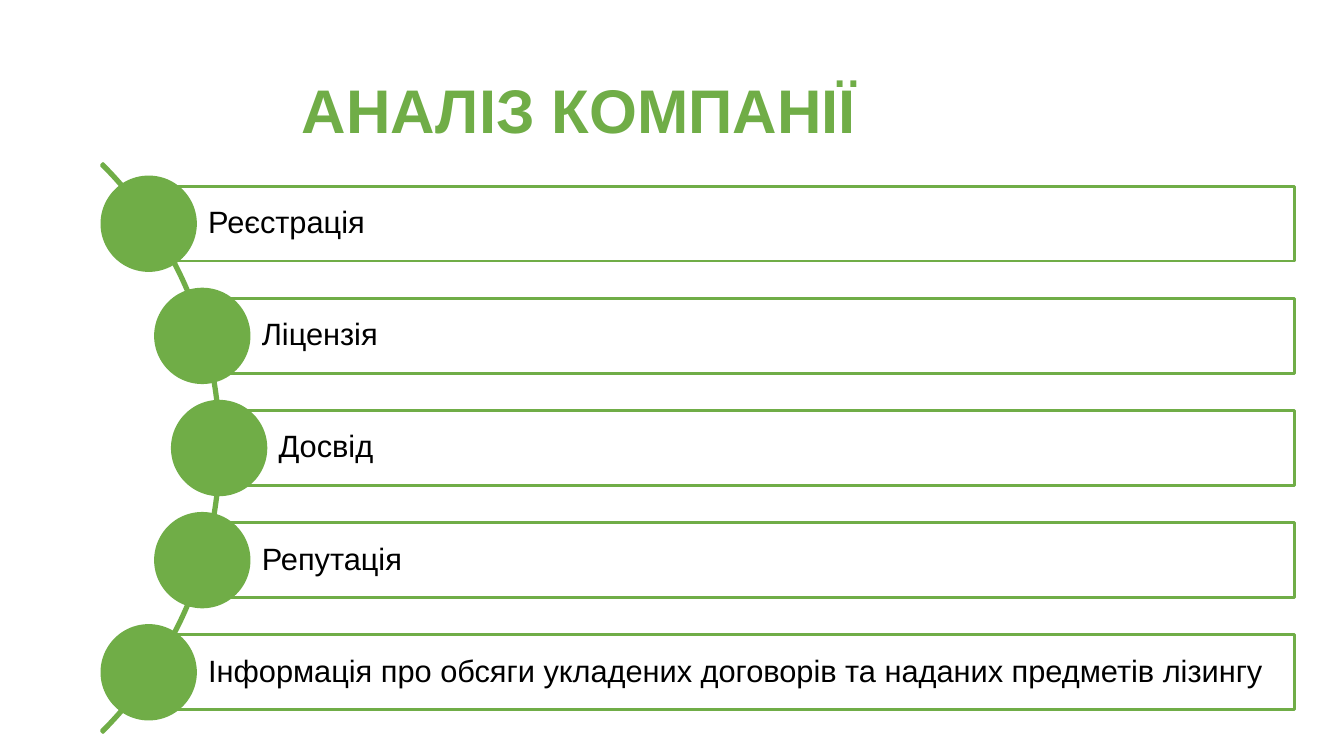
import pptx
import pptx.util
import pptx.dml.color
import pptx.enum.shapes
import pptx.enum.text

Pt = pptx.util.Pt
Shapes = pptx.enum.shapes.MSO_SHAPE
Align = pptx.enum.text.PP_ALIGN
Anchor = pptx.enum.text.MSO_ANCHOR

GREEN = "70AD47"
WHITE = "FFFFFF"
BLACK = "000000"


def color(value):
    return pptx.dml.color.RGBColor.from_string(value)


class SlideBuilder:
    font_name = "Arial"
    line_width = 2
    line_spacing = 0.9

    def __init__(self, slide):
        self.slide = slide

    def set_text(self, shape, text, text_color, align, insets, font_format):
        frame = shape.text_frame
        left, top, right, bottom = insets
        frame_format = {
            "word_wrap": True,
            "vertical_anchor": Anchor.MIDDLE,
            "margin_left": Pt(left),
            "margin_top": Pt(top),
            "margin_right": Pt(right),
            "margin_bottom": Pt(bottom),
        }
        for name, value in frame_format.items():
            setattr(frame, name, value)
        paragraph = frame.paragraphs[0]
        paragraph.alignment = align
        paragraph.line_spacing = self.line_spacing
        run = paragraph.add_run()
        run.text = text
        run.font.color.rgb = color(text_color)
        for name, value in {"name": self.font_name, **font_format}.items():
            setattr(run.font, name, value)

    def title(self, text, left, top, width, height):
        box = self.slide.shapes.add_textbox(Pt(left), Pt(top), Pt(width), Pt(height))
        font_format = {"size": Pt(44), "bold": True}
        self.set_text(box, text, GREEN, Align.CENTER, (7.2,) * 4, font_format)

    def shape(self, kind, left, top, width, height, fill=None):
        shape = self.slide.shapes.add_shape(kind, Pt(left), Pt(top), Pt(width), Pt(height))
        shape.shadow.inherit = False
        shape.line.color.rgb = color(GREEN)
        shape.line.width = Pt(self.line_width)
        if fill:
            shape.fill.solid()
            shape.fill.fore_color.rgb = color(fill)
        else:
            shape.fill.background()
        return shape

    def arc(self, center_x, center_y, radius):
        arc = self.shape(Shapes.BLOCK_ARC, center_x - radius, center_y - radius,
                         2 * radius, 2 * radius)
        for index, value in enumerate((189, 27, 0.003)):
            arc.adjustments[index] = value

    def bar(self, text, left, right, center_y, height):
        bar = self.shape(Shapes.RECTANGLE, left, center_y - height / 2,
                         right - left, height, WHITE)
        self.set_text(bar, text, BLACK, Align.LEFT, (42.5, 4.3, 4.3, 4.3), {"size": Pt(22)})

    def dot(self, center_x, center_y, diameter):
        self.shape(Shapes.OVAL, center_x - diameter / 2, center_y - diameter / 2,
                   diameter, diameter, GREEN)


def main():
    presentation = pptx.Presentation()
    presentation.slide_width = Pt(960)
    presentation.slide_height = Pt(540)
    builder = SlideBuilder(presentation.slides.add_slide(presentation.slide_layouts[6]))

    builder.title("АНАЛІЗ КОМПАНІЇ", 66, 28.8, 695.5, 104.4)

    middle_y = 320
    row_step = 80.1
    bar_right = 924.8
    builder.arc(-129.6, middle_y, 287.3)

    criteria = [
        "Реєстрація",
        "Ліцензія",
        "Досвід",
        "Репутація",
        "Інформація про обсяги укладених договорів та наданих предметів лізингу",
    ]
    dot_x_by_distance = [156.5, 144.5, 106.2]
    middle = len(criteria) // 2
    for index, criterion in enumerate(criteria):
        center_x = dot_x_by_distance[abs(index - middle)]
        center_y = middle_y + (index - middle) * row_step
        builder.bar(criterion, center_x, bar_right, center_y, 53.4)
        builder.dot(center_x, center_y, 66.8)

    presentation.save("out.pptx")


if __name__ == "__main__":
    main()
